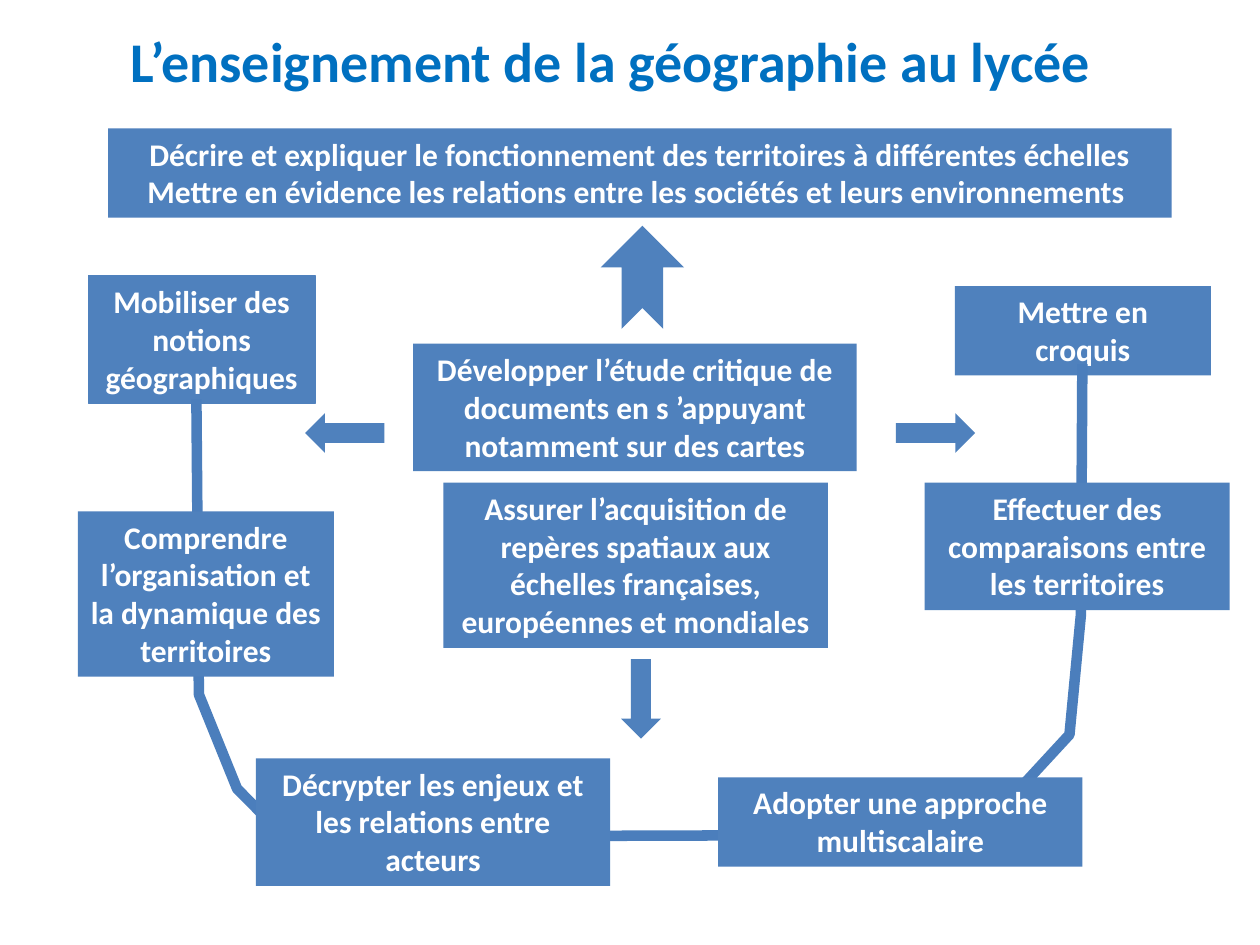
from typing import NamedTuple

from pptx import Presentation
from pptx.dml.color import RGBColor
from pptx.enum.shapes import MSO_SHAPE
from pptx.enum.text import MSO_ANCHOR, MSO_AUTO_SIZE, PP_ALIGN
from pptx.util import Cm, Pt

BLUE, RING_BLUE, TITLE_BLUE, WHITE = "4F81BD", "4B7EBC", "0070C0", "FFFFFF"
FONT = "Calibri"


class Box(NamedTuple):
    left: float
    top: float
    width: float
    height: float
    text: str
    outlined: bool = False


class Arrow(NamedTuple):
    left: float
    top: float
    rotation: int
    kind: MSO_SHAPE = MSO_SHAPE.RIGHT_ARROW
    width: float = 1.6
    height: float = 0.8


CENTRAL_BOXES = [
    Box(8.33, 6.93, 8.94, 2.57,
        "Développer l’étude critique de documents en s ’appuyant notamment sur des cartes"),
    Box(8.94, 9.73, 7.75, 3.33,
        "Assurer l’acquisition de repères spatiaux aux échelles françaises, "
        "européennes et mondiales"),
    Box(2.18, 2.59, 21.44, 1.8,
        "Décrire et expliquer le fonctionnement des territoires à différentes échelles\n"
        "Mettre en évidence les relations entre les sociétés et leurs environnements "),
]
UPPER_SKILLS = [
    Box(1.78, 5.56, 4.57, 2.57, "Mobiliser des notions géographiques", outlined=True),
    Box(19.25, 5.77, 5.16, 1.8, "Mettre en croquis"),
]
LOWER_SKILLS = [
    Box(1.57, 10.31, 5.16, 3.33, "Comprendre l’organisation et la dynamique des territoires"),
    Box(18.64, 9.73, 6.15, 2.57, "Effectuer des comparaisons entre les territoires"),
    Box(14.48, 15.67, 7.34, 1.8, "Adopter une approche multiscalaire"),
    Box(5.16, 15.29, 7.14, 2.57, "Décrypter les enjeux et les relations entre acteurs"),
]
TITLE = Box(2.39, 0.41, 20.83, 1.63, "L’enseignement de la géographie au lycée")
RING = [(3.96, 8.05), (4.01, 14), (4.78, 15.9), (5.74, 16.87), (15.37, 16.84),
        (19.76, 16.76), (21.56, 14.81), (21.79, 12.4), (21.82, 7.34)]
ARROWS = [
    Arrow(11.91, 4.75, 270, MSO_SHAPE.NOTCHED_RIGHT_ARROW, 2.08, 1.68),
    Arrow(18.06, 8.33, 0),
    Arrow(12.12, 13.69, 90),
    Arrow(6.15, 8.33, 180),
]


def rgb(value: str) -> RGBColor:
    return RGBColor.from_string(value)


def place(item: Box | Arrow) -> tuple[Cm, ...]:
    return tuple(Cm(v) for v in (item.left, item.top, item.width, item.height))


def write(tf, text: str, size: int, color: str, align: PP_ALIGN) -> None:
    tf.text = text
    tf.word_wrap = True
    tf.auto_size = MSO_AUTO_SIZE.SHAPE_TO_FIT_TEXT
    tf.vertical_anchor = MSO_ANCHOR.TOP
    for p in tf.paragraphs:
        p.alignment = align
        for r in p.runs:
            r.font.name = FONT
            r.font.size = Pt(size)
            r.font.bold = True
            r.font.color.rgb = rgb(color)


def add_filled(s, kind: MSO_SHAPE, item: Box | Arrow):
    """Add a flat blue shape without outline or shadow."""
    sp = s.shapes.add_shape(kind, *place(item))
    sp.shadow.inherit = False
    sp.fill.solid()
    sp.fill.fore_color.rgb = rgb(BLUE)
    sp.line.fill.background()
    return sp


def draw_boxes(s, boxes: list[Box]) -> None:
    for box in boxes:
        sp = add_filled(s, MSO_SHAPE.RECTANGLE, box)
        if box.outlined:
            sp.line.color.rgb = rgb(BLUE)
            sp.line.width = Pt(0.75)
        write(sp.text_frame, box.text, 18, WHITE, PP_ALIGN.CENTER)


def draw_title(s) -> None:
    sp = s.shapes.add_textbox(*place(TITLE))
    write(sp.text_frame, TITLE.text, 32, TITLE_BLUE, PP_ALIGN.LEFT)


def draw_ring(s) -> None:
    """Draw the open line that links the skills."""
    start, *rest = [(Cm(x), Cm(y)) for x, y in RING]
    builder = s.shapes.build_freeform(*start)
    builder.add_line_segments(rest, close=False)
    sp = builder.convert_to_shape()
    sp.shadow.inherit = False
    sp.fill.background()
    sp.line.color.rgb = rgb(RING_BLUE)
    sp.line.width = Pt(6)


def draw_arrows(s) -> None:
    for arrow in ARROWS:
        add_filled(s, arrow.kind, arrow).rotation = arrow.rotation


def main() -> None:
    prs = Presentation()
    prs.slide_width, prs.slide_height = Cm(25.4), Cm(19.05)
    s = prs.slides.add_slide(prs.slide_layouts[6])
    draw_boxes(s, CENTRAL_BOXES + UPPER_SKILLS)
    draw_title(s)
    draw_ring(s)
    draw_boxes(s, LOWER_SKILLS)
    draw_arrows(s)
    prs.save("out.pptx")


if __name__ == "__main__":
    main()
